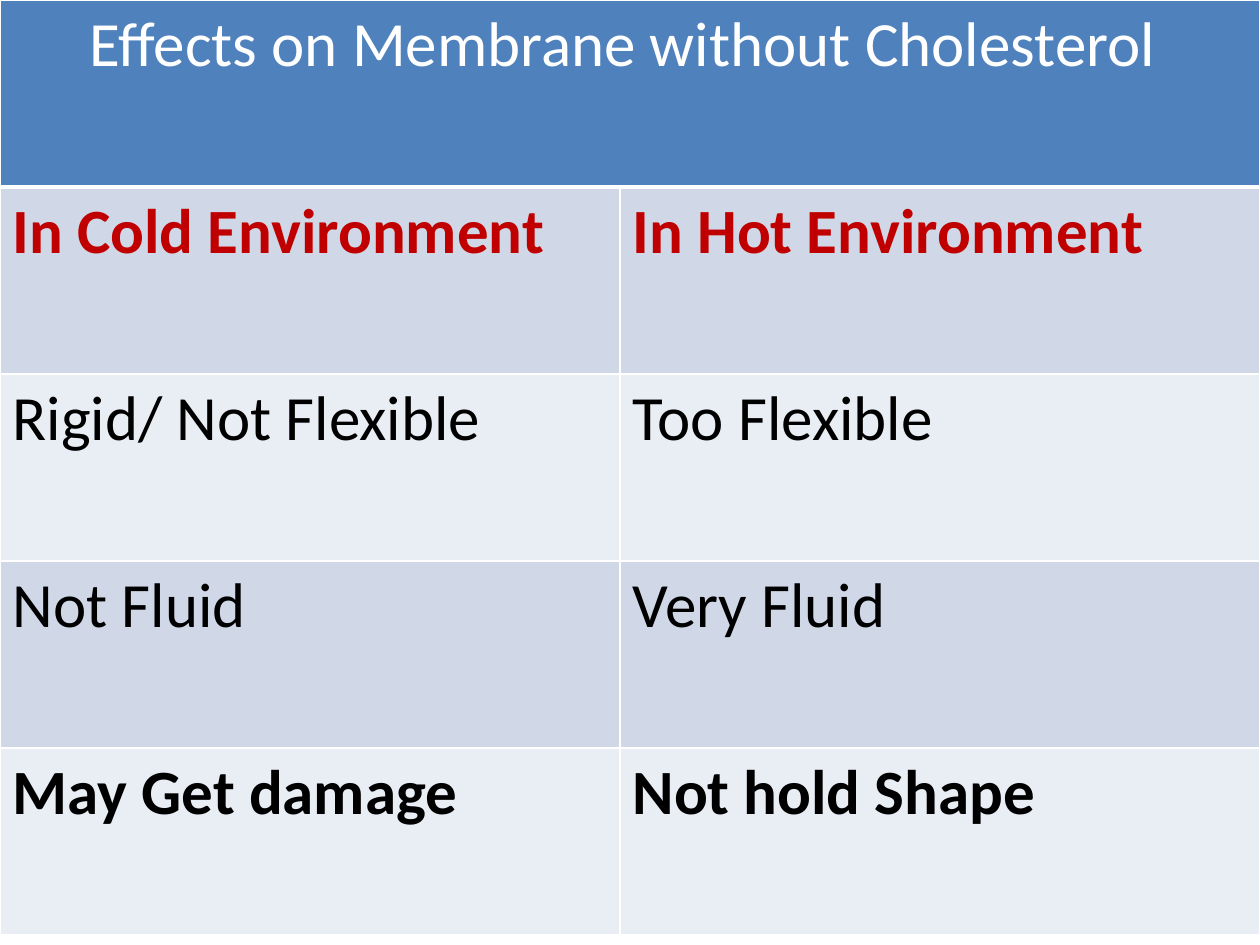
from dataclasses import dataclass

from lxml.etree import SubElement
from pptx import Presentation
from pptx.dml.color import RGBColor
from pptx.enum.text import PP_ALIGN as Align
from pptx.oxml.ns import qn
from pptx.table import _Cell as Cell
from pptx.util import Emu, Pt

EMU_PER_PX = 914400 / 126
SLIDE_WIDTH, SLIDE_HEIGHT = 1260, 945
COLUMN_WIDTHS = (620, 640)
ROW_HEIGHT = 187


@dataclass(frozen=True)
class Theme:
    font: str = "Calibri"
    size: int = 36
    header: str = "4F81BD"
    bands: tuple[str, str] = ("D0D8E8", "E9EDF4")
    white: str = "FFFFFF"
    black: str = "000000"
    red: str = "C00000"
    thin: int = 1
    thick: int = 3


@dataclass(frozen=True)
class ComparisonRow:
    cold: str
    hot: str
    color: str
    bold: bool = False


THEME = Theme()
HEADING = "Effects on Membrane without Cholesterol "
ROWS = (
    ComparisonRow("In Cold Environment", "In Hot Environment", THEME.red, bold=True),
    ComparisonRow("Rigid/ Not Flexible", "Too Flexible", THEME.black),
    ComparisonRow("Not Fluid", "Very Fluid", THEME.black),
    ComparisonRow("May Get damage", "Not hold Shape", THEME.black, bold=True),
)


def px(length: int) -> Emu:
    return Emu(round(length * EMU_PER_PX))


def write_text(cell: Cell, text: str, *, color: str, bold: bool = False,
               align: Align = Align.LEFT) -> None:
    paragraph = cell.text_frame.paragraphs[0]
    paragraph.alignment = align
    run = paragraph.add_run()
    run.text = text
    run.font.name = THEME.font
    run.font.size = Pt(THEME.size)
    run.font.bold = bold
    run.font.color.rgb = RGBColor.from_string(color)


def style_cell(cell: Cell, fill: str, *, top: int = THEME.thin,
               bottom: int = THEME.thin) -> None:
    """Give the cell white borders, then its fill, in the order the schema asks."""
    properties = cell._tc.get_or_add_tcPr()
    widths = {"L": THEME.thin, "R": THEME.thin, "T": top, "B": bottom}
    for side, width in widths.items():
        line = SubElement(properties, qn(f"a:ln{side}"), w=str(Pt(width)))
        solid = SubElement(line, qn("a:solidFill"))
        SubElement(solid, qn("a:srgbClr"), val=THEME.white)
    cell.fill.solid()
    cell.fill.fore_color.rgb = RGBColor.from_string(fill)


def main() -> None:
    presentation = Presentation()
    presentation.slide_width = px(SLIDE_WIDTH)
    presentation.slide_height = px(SLIDE_HEIGHT)
    slide = presentation.slides.add_slide(presentation.slide_layouts[6])

    row_count = len(ROWS) + 1
    table = slide.shapes.add_table(
        row_count, len(COLUMN_WIDTHS), 0, 0,
        px(sum(COLUMN_WIDTHS)), px(ROW_HEIGHT * row_count)).table
    for column, width in zip(table.columns, COLUMN_WIDTHS):
        column.width = px(width)
    for table_row in table.rows:
        table_row.height = px(ROW_HEIGHT)

    heading = table.cell(0, 0)
    heading.merge(table.cell(0, 1))
    for cell in table.rows[0].cells:
        style_cell(cell, THEME.header, bottom=THEME.thick)
    write_text(heading, HEADING, color=THEME.white, align=Align.CENTER)

    for index, row in enumerate(ROWS):
        top = THEME.thick if index == 0 else THEME.thin
        for cell, text in zip(table.rows[index + 1].cells, (row.cold, row.hot)):
            style_cell(cell, THEME.bands[index % 2], top=top)
            write_text(cell, text, color=row.color, bold=row.bold)

    presentation.save("out.pptx")


if __name__ == "__main__":
    main()
